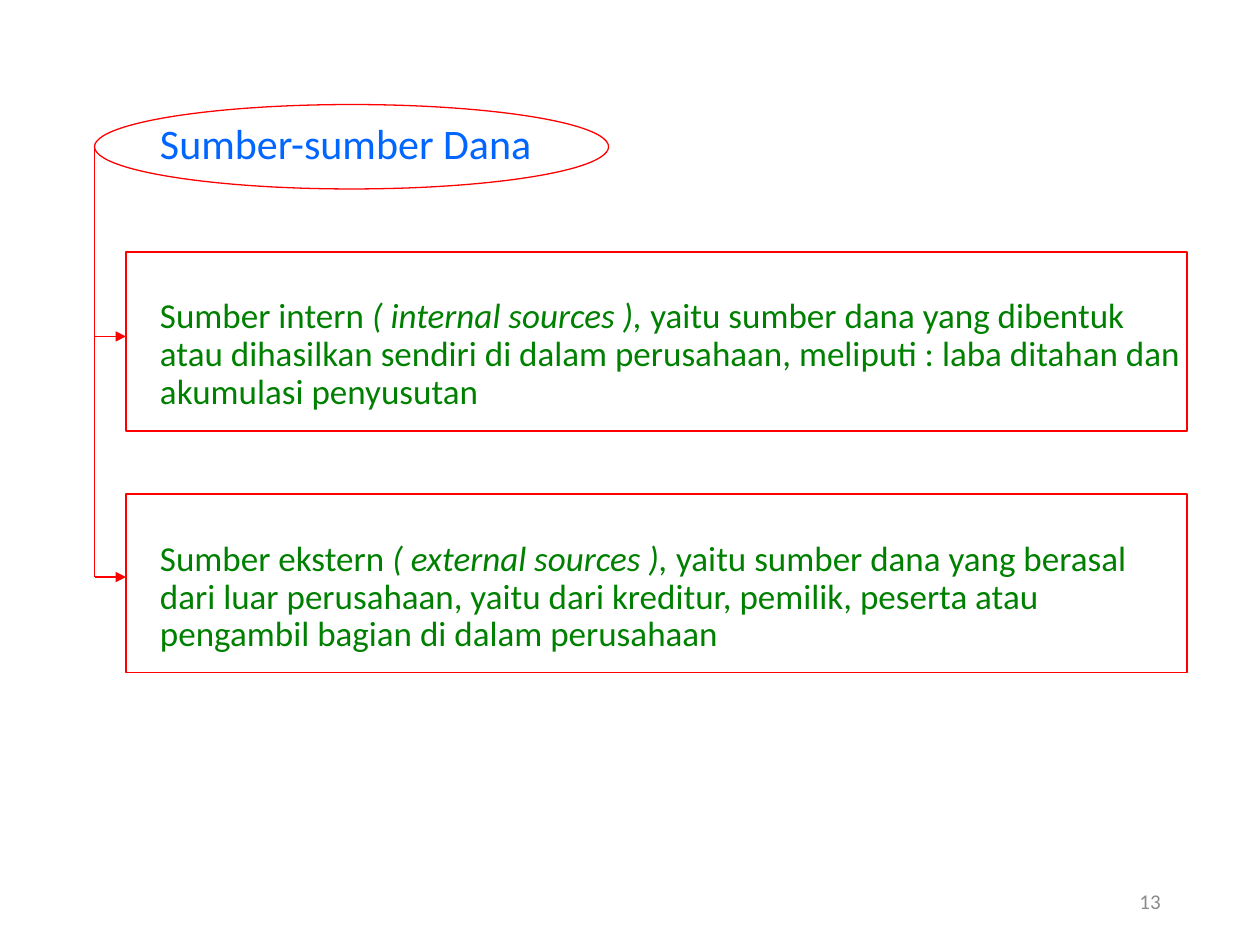
from typing import NamedTuple

from lxml.etree import SubElement
from pptx import Presentation
from pptx.dml.color import RGBColor
from pptx.enum.shapes import MSO_CONNECTOR, MSO_SHAPE
from pptx.enum.text import MSO_ANCHOR, PP_ALIGN
from pptx.oxml.ns import qn
from pptx.util import Inches, Pt

RED, BLUE, GREEN, GRAY = "FF0000", "0066FF", "008000", "8C8C8C"


class Source(NamedTuple):
    name: str
    term: str
    meaning: str
    box_top: float
    arrow_y: float


SOURCES = [
    Source("Sumber intern ", "( internal sources ), ",
           "yaitu sumber dana yang dibentuk atau dihasilkan sendiri di dalam "
           "perusahaan, meliputi : laba ditahan dan akumulasi penyusutan",
           2, 2.67),
    Source("Sumber ekstern ", "( external sources ), ",
           "yaitu sumber dana yang berasal dari luar perusahaan, yaitu dari "
           "kreditur, pemilik, peserta atau pengambil bagian di dalam perusahaan",
           3.92, 4.58),
]
TRUNK_X, TRUNK_TOP, BOX_LEFT = 0.75, 1.17, 1


def rgb(color: str) -> RGBColor:
    return RGBColor.from_string(color)


def add_run(p, text: str, *, size: float, color: str, italic: bool = False) -> None:
    r = p.add_run()
    r.text = text
    r.font.name = "Calibri"
    r.font.size = Pt(size)
    r.font.italic = italic
    r.font.color.rgb = rgb(color)


def add_frame(s, left: float, top: float, width: float, height: float):
    tf = s.shapes.add_textbox(Inches(left), Inches(top),
                              Inches(width), Inches(height)).text_frame
    tf.word_wrap = True
    return tf


def add_outline(s, kind: MSO_SHAPE, left: float, top: float,
                width: float, height: float) -> None:
    sp = s.shapes.add_shape(kind, Inches(left), Inches(top),
                            Inches(width), Inches(height))
    sp.shadow.inherit = False
    sp.fill.background()
    sp.line.color.rgb = rgb(RED)
    sp.line.width = Pt(0.75)


def add_line(s, x1: float, y1: float, x2: float, y2: float,
             arrow: bool = False) -> None:
    line = s.shapes.add_connector(MSO_CONNECTOR.STRAIGHT, Inches(x1), Inches(y1),
                                  Inches(x2), Inches(y2))
    line.line.color.rgb = rgb(RED)
    line.line.width = Pt(0.75)
    if arrow:
        SubElement(line.line._get_or_add_ln(), qn("a:tailEnd"), type="triangle")
    SubElement(line._element.spPr, qn("a:effectLst"))


def main() -> None:
    prs = Presentation()
    prs.slide_width, prs.slide_height = Inches(10), Inches(7.5)
    s = prs.slides.add_slide(prs.slide_layouts[6])

    # Heading and the two definitions
    tf = add_frame(s, 0.5, 0.93, 9, 6)
    tf.margin_left = Inches(0.77)
    title = tf.paragraphs[0]
    title.line_spacing = 0.9
    add_run(title, "Sumber-sumber Dana", size=24, color=BLUE)
    for source in SOURCES:
        p = tf.add_paragraph()
        p.line_spacing = 0.9
        p.space_before = Pt(74)
        add_run(p, source.name, size=20, color=GREEN)
        add_run(p, source.term, size=20, color=GREEN, italic=True)
        add_run(p, source.meaning, size=20, color=GREEN)

    # Outlines around the heading and definitions
    add_outline(s, MSO_SHAPE.OVAL, TRUNK_X, 0.83, 4.08, 0.67)
    for source in SOURCES:
        add_outline(s, MSO_SHAPE.RECTANGLE, BOX_LEFT, source.box_top, 8.42, 1.42)

    # Trunk line with an arrow to each definition
    add_line(s, TRUNK_X, TRUNK_TOP, TRUNK_X, SOURCES[-1].arrow_y)
    for source in SOURCES:
        add_line(s, TRUNK_X, source.arrow_y, BOX_LEFT, source.arrow_y, arrow=True)

    # Slide number
    tf = add_frame(s, 7.06, 6.95, 2.25, 0.4)
    tf.vertical_anchor = MSO_ANCHOR.MIDDLE
    p = tf.paragraphs[0]
    p.alignment = PP_ALIGN.RIGHT
    add_run(p, "13", size=12, color=GRAY)

    prs.save("out.pptx")


if __name__ == "__main__":
    main()
